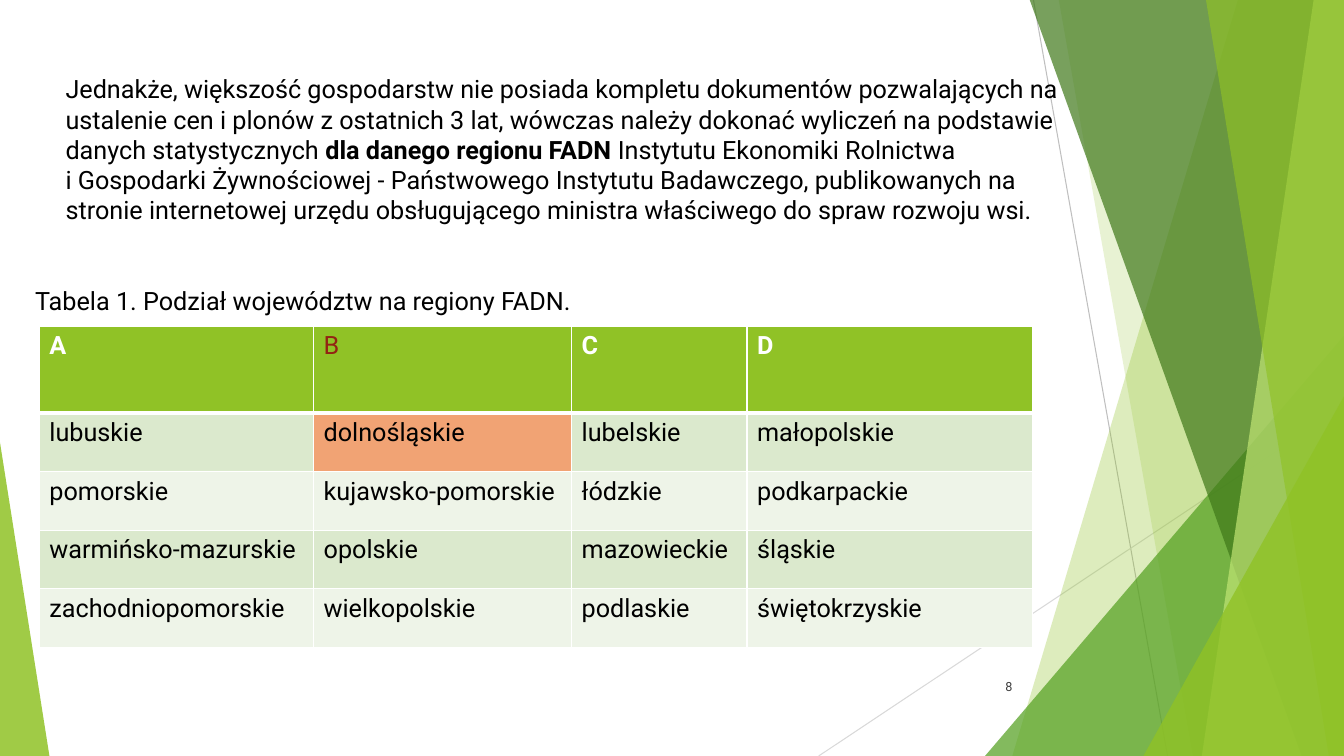
import pptx
import pptx.dml.color
import pptx.enum.shapes
import pptx.enum.text
import pptx.oxml
import pptx.oxml.ns
import pptx.util

Inches = pptx.util.Inches
Pt = pptx.util.Pt
Color = pptx.dml.color.RGBColor
Align = pptx.enum.text.PP_ALIGN
Anchor = pptx.enum.text.MSO_ANCHOR
Kind = pptx.enum.shapes.MSO_SHAPE

FONT = "Roboto"
BLACK = Color(0x00, 0x00, 0x00)
WHITE = Color(0xFF, 0xFF, 0xFF)
GREY = Color(0x3B, 0x3B, 0x3B)
SILVER = Color(0xBF, 0xBF, 0xBF)
PALE = Color(0xD9, 0xD9, 0xD9)
LIME = Color(0x90, 0xC2, 0x26)
GREEN = Color(0x54, 0xA0, 0x21)
DARK = Color(0x3F, 0x78, 0x19)
LIGHT = Color(0xC0, 0xE4, 0x74)
BAND = Color(0xDB, 0xE9, 0xCD)
SOFT = Color(0xEE, 0xF4, 0xE8)
ORANGE = Color(0xF1, 0xA3, 0x74)
RED = Color(0x93, 0x23, 0x13)

# Slanted bands: top left, top right, bottom right, bottom left x; colour, alpha
BACK = [
    (12.28, 13.33, 13.33, 10.04, LIME, 30),
    (10.5, 13.33, 13.33, 11.83, LIME, 20),
]
FRONT = [
    (10.21, 13.33, 13.33, 12.91, DARK, 70),
    (13.03, 13.33, 13.33, 11.92, LIGHT, 70),
    (11.96, 13.33, 13.33, 13.18, LIME, 65),
]

WIDTHS = [2.72, 2.56, 1.74, 2.83]
REGIONS = [
    ["A", "B", "C", "D"],
    ["lubuskie", "dolnośląskie", "lubelskie", "małopolskie"],
    ["pomorskie", "kujawsko-pomorskie", "łódzkie", "podkarpackie"],
    ["warmińsko-mazurskie", "opolskie", "mazowieckie", "śląskie"],
    ["zachodniopomorskie", "wielkopolskie", "podlaskie", "świętokrzyskie"],
]


def xml(text):
    return pptx.oxml.parse_xml(text.replace(">", " " + pptx.oxml.ns.nsdecls("a") + ">", 1))


def style(run, size=18, color=BLACK, bold=False):
    font = run.font
    font.name, font.size, font.bold = FONT, Pt(size), bold
    font.color.rgb = color


def paint(shape, color, alpha):
    shape.shadow.inherit = False
    shape.line.fill.background()
    shape.fill.solid()
    shape.fill.fore_color.rgb = color
    tint = shape.element.spPr.find(".//" + pptx.oxml.ns.qn("a:srgbClr"))
    tint.append(xml(f'<a:alpha val="{alpha * 1000}"></a:alpha>'))


def add_line(slide, x1, y1, x2, y2, color):
    line = slide.shapes.add_connector(
        pptx.enum.shapes.MSO_CONNECTOR.STRAIGHT,
        Inches(x1), Inches(y1), Inches(x2), Inches(y2))
    line.line.color.rgb = color
    line.line.width = Pt(0.75)
    line.element.spPr.append(xml("<a:effectLst></a:effectLst>"))


def add_band(slide, x1, x2, x3, x4, color, alpha):
    top, low = Inches(-0.01), Inches(7.5)
    form = slide.shapes.build_freeform(Inches(x1), top)
    form.add_line_segments([(Inches(x2), top), (Inches(x3), low), (Inches(x4), low)])
    paint(form.convert_to_shape(), color, alpha)


def add_wedge(slide, left, top, width, tip, color, alpha):
    wedge = slide.shapes.add_shape(
        Kind.ISOSCELES_TRIANGLE,
        Inches(left), Inches(top), Inches(width), Inches(7.5 - top))
    wedge.adjustments[0] = tip
    paint(wedge, color, alpha)


def add_decor(slide):
    add_line(slide, 10.25, 0, 11.58, 7.5, SILVER)
    add_line(slide, 13.33, 4.03, 8.12, 7.5, PALE)
    for band in BACK:
        add_band(slide, *band)
    add_wedge(slide, 9.77, 3.33, 3.56, 1, GREEN, 72)
    for band in FRONT:
        add_band(slide, *band)
    add_wedge(slide, 11.34, 3.93, 1.99, 1, LIME, 80)
    add_wedge(slide, 0, 4.39, 0.49, 0, LIME, 85)


def fill_body(slide, body):
    body.left, body.top = Inches(0.55), Inches(0.68)
    body.width, body.height = Inches(10.45), Inches(1.7)
    frame = body.text_frame
    frame.auto_size = pptx.enum.text.MSO_AUTO_SIZE.NONE
    frame.text = ("Jednakże, większość gospodarstw nie posiada kompletu "
                  "dokumentów pozwalających na")
    para = frame.add_paragraph()
    para.text = ("ustalenie cen i plonów z ostatnich 3 lat, wówczas należy dokonać "
                 "wyliczeń na podstawie danych statystycznych ")
    key = para.add_run()
    key.text = "dla danego regionu FADN "
    para.add_run().text = "Instytutu Ekonomiki Rolnictwa "
    para.add_line_break()
    para.add_run().text = (
        "i Gospodarki Żywnościowej - Państwowego Instytutu Badawczego, "
        "publikowanych na stronie internetowej urzędu obsługującego "
        "ministra właściwego do spraw rozwoju wsi.")
    for para in frame.paragraphs:
        para.space_before = Pt(0)
        props = para._p.get_or_add_pPr()
        props.set("marL", "0")
        props.set("indent", "0")
        props.append(xml("<a:buNone></a:buNone>"))
        for run in para.runs:
            style(run, bold=run.text == key.text)
    # Text lies in front of the decoration
    slide.shapes.element.append(body.element)


def add_text(slide, box, text, size, color, align, anchor):
    frame = slide.shapes.add_textbox(*map(Inches, box)).text_frame
    frame.word_wrap = True
    frame.vertical_anchor = anchor
    frame.text = text
    frame.paragraphs[0].alignment = align
    style(frame.paragraphs[0].runs[0], size, color)


def set_edges(cell, row):
    props = cell._tc.get_or_add_tcPr()
    thick = {"T": 3 if row == 1 else 1, "B": 3 if row == 0 else 1}
    for spot, side in enumerate("LRTB"):
        width = Pt(thick.get(side, 1))
        props.insert(spot, xml(
            f'<a:ln{side} w="{width}"><a:solidFill><a:srgbClr val="{WHITE}"/>'
            f"</a:solidFill></a:ln{side}>"))


def add_grid(slide):
    rows, cols = len(REGIONS), len(WIDTHS)
    table = slide.shapes.add_table(
        rows, cols, Inches(0.39), Inches(3.24), Inches(9.85), Inches(3.18)).table
    table.horz_banding = False
    for col, width in zip(table.columns, WIDTHS):
        col.width = Inches(width)
    for r, names in enumerate(REGIONS):
        head = r == 0
        table.rows[r].height = Inches(0.86 if head else 0.58)
        for c, name in enumerate(names):
            cell = table.cell(r, c)
            cell.text = name
            fill, ink = (LIME, WHITE) if head else (BAND if r % 2 else SOFT, BLACK)
            if name == "B":
                ink = RED
            elif name == "dolnośląskie":
                fill = ORANGE
            cell.fill.solid()
            cell.fill.fore_color.rgb = fill
            style(cell.text_frame.paragraphs[0].runs[0], 18, ink, ink == WHITE)
            set_edges(cell, r)


def main():
    deck = pptx.Presentation()
    deck.slide_width, deck.slide_height = Inches(13.33), Inches(7.5)
    slide = deck.slides.add_slide(deck.slide_layouts[1])
    title = slide.shapes.title.element
    title.getparent().remove(title)

    add_decor(slide)
    fill_body(slide, slide.placeholders[1])
    # Caption, table and page number
    add_text(slide, (0.25, 2.78, 9.99, 0.4), "Tabela 1. Podział województw na regiony FADN.",
             18, BLACK, Align.LEFT, Anchor.TOP)
    add_grid(slide)
    add_text(slide, (9.39, 6.61, 0.75, 0.4), "8", 9, GREY, Align.RIGHT, Anchor.MIDDLE)
    deck.save("out.pptx")


if __name__ == "__main__":
    main()
